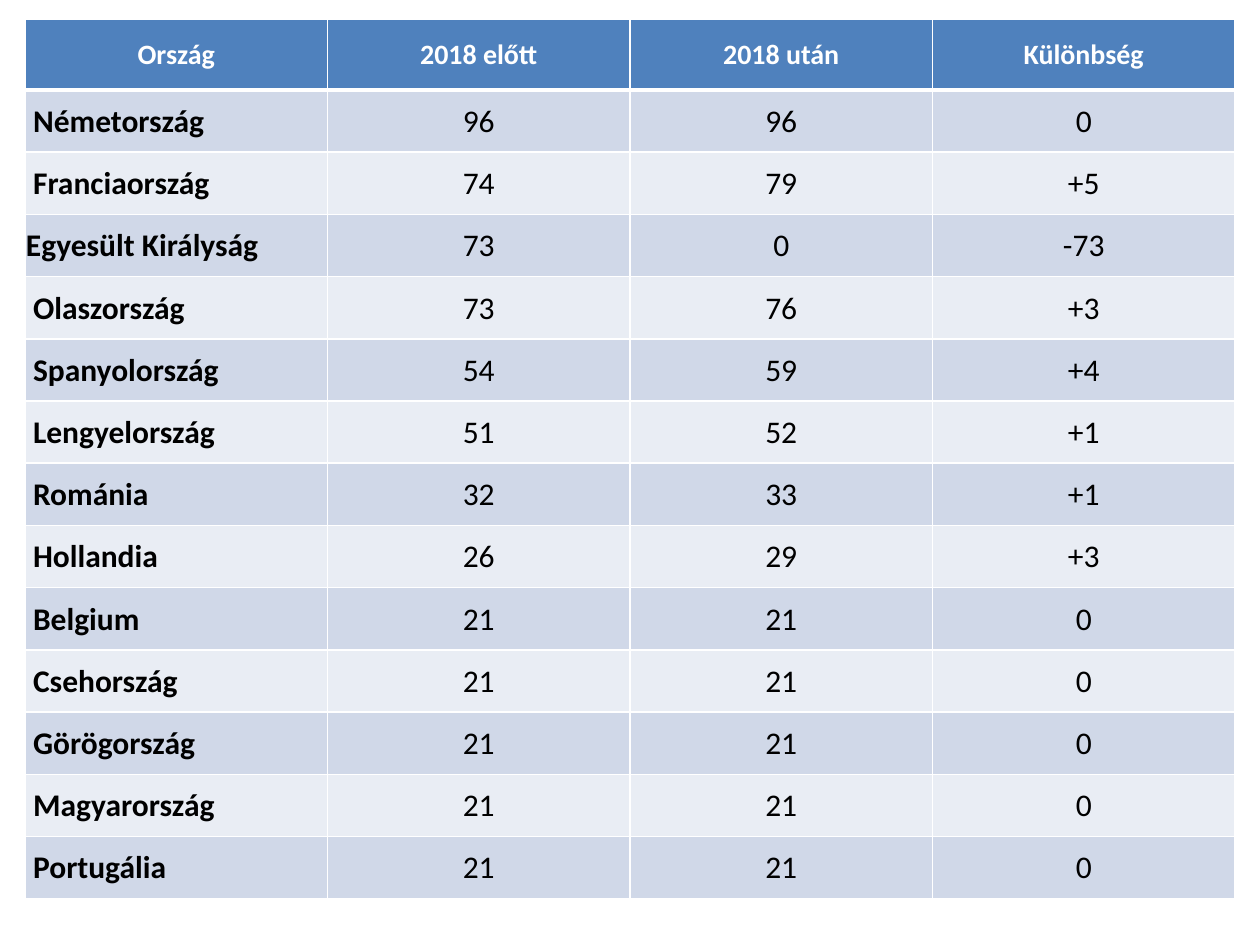
import pptx
import pptx.dml.color
import pptx.enum.text
import pptx.oxml.ns
import pptx.util
from lxml import etree

RGBColor = pptx.dml.color.RGBColor
ALIGN = pptx.enum.text.PP_ALIGN

WHITE = RGBColor(0xFF, 0xFF, 0xFF)
BLACK = RGBColor(0x00, 0x00, 0x00)
HEADER_BLUE = RGBColor(0x4F, 0x81, 0xBD)
BAND_DARK = RGBColor(0xD0, 0xD8, 0xE8)
BAND_LIGHT = RGBColor(0xE9, 0xED, 0xF4)

PX_PER_INCH = 126

HEADINGS = ("Ország", "2018 előtt", "2018 után", "Különbség")
COUNTRIES = (
    (" Németország", "96", "96", "0"),
    (" Franciaország", "74", "79", "+5"),
    ("Egyesült Királyság", "73", "0", "-73"),
    (" Olaszország", "73", "76", "+3"),
    (" Spanyolország", "54", "59", "+4"),
    (" Lengyelország", "51", "52", "+1"),
    (" Románia", "32", "33", "+1"),
    (" Hollandia", "26", "29", "+3"),
    (" Belgium", "21", "21", "0"),
    (" Csehország", "21", "21", "0"),
    (" Görögország", "21", "21", "0"),
    (" Magyarország", "21", "21", "0"),
    (" Portugália", "21", "21", "0"),
)


def px(length):
    return pptx.util.Emu(round(length * 914400 / PX_PER_INCH))


def write_text(frame, text, *, size, color, font="Calibri", bold=False, align=ALIGN.LEFT):
    paragraph = frame.paragraphs[0]
    paragraph.alignment = align
    run = paragraph.add_run()
    run.text = text
    run.font.name = font
    run.font.size = pptx.util.Pt(size)
    run.font.bold = bold
    run.font.color.rgb = color


class SlideBuilder:
    heading_size = 16
    body_size = 18
    rule, header_rule = 1, 3

    def __init__(self, slide):
        self.slide = slide

    def borders(self, cell, top, bottom):
        """White rules on all four sides, widths in points."""
        properties = cell._tc.get_or_add_tcPr()
        widths = {"a:lnL": self.rule, "a:lnR": self.rule, "a:lnT": top, "a:lnB": bottom}
        for tag, width in widths.items():
            line = etree.SubElement(properties, pptx.oxml.ns.qn(tag), w=str(pptx.util.Pt(width)))
            fill = etree.SubElement(line, pptx.oxml.ns.qn("a:solidFill"))
            etree.SubElement(fill, pptx.oxml.ns.qn("a:srgbClr"), val=str(WHITE))

    def cell(self, cell, text, fill, top, bottom, **text_format):
        self.borders(cell, top, bottom)
        cell.fill.solid()
        cell.fill.fore_color.rgb = fill
        cell.vertical_anchor = pptx.enum.text.MSO_ANCHOR.MIDDLE
        cell.margin_left = cell.margin_right = cell.margin_top = px(1)
        cell.margin_bottom = 0
        write_text(cell.text_frame, text, **text_format)

    def table(self, left, top, width, header_height, body_height, headings, records):
        frame = self.slide.shapes.add_table(
            len(records) + 1, len(headings),
            px(left), px(top), px(width), px(header_height + body_height))
        table = frame.table
        table.horz_banding = False
        for column in table.columns:
            column.width = px(width / len(headings))
        for index, row in enumerate(table.rows):
            row.height = px(body_height / len(records) if index else header_height)

        # Header row
        for column, heading in enumerate(headings):
            self.cell(table.cell(0, column), heading, HEADER_BLUE, self.rule, self.header_rule,
                      size=self.heading_size, color=WHITE, bold=True, align=ALIGN.CENTER)

        # Banded body: bold first column, centred numbers
        for row, record in enumerate(records, start=1):
            band = BAND_DARK if row % 2 else BAND_LIGHT
            top_rule = self.header_rule if row == 1 else self.rule
            for column, value in enumerate(record):
                is_country = column == 0
                self.cell(table.cell(row, column), value, band, top_rule, self.rule,
                          size=self.body_size, color=BLACK, bold=is_country,
                          align=ALIGN.LEFT if is_country else ALIGN.CENTER)


def main():
    deck = pptx.Presentation()
    deck.slide_width, deck.slide_height = px(1260), px(945)
    builder = SlideBuilder(deck.slides.add_slide(deck.slide_layouts[6]))

    # Country table
    builder.table(25, 19, 1210, 71, 809, HEADINGS, COUNTRIES)

    deck.save("out.pptx")


if __name__ == "__main__":
    main()
